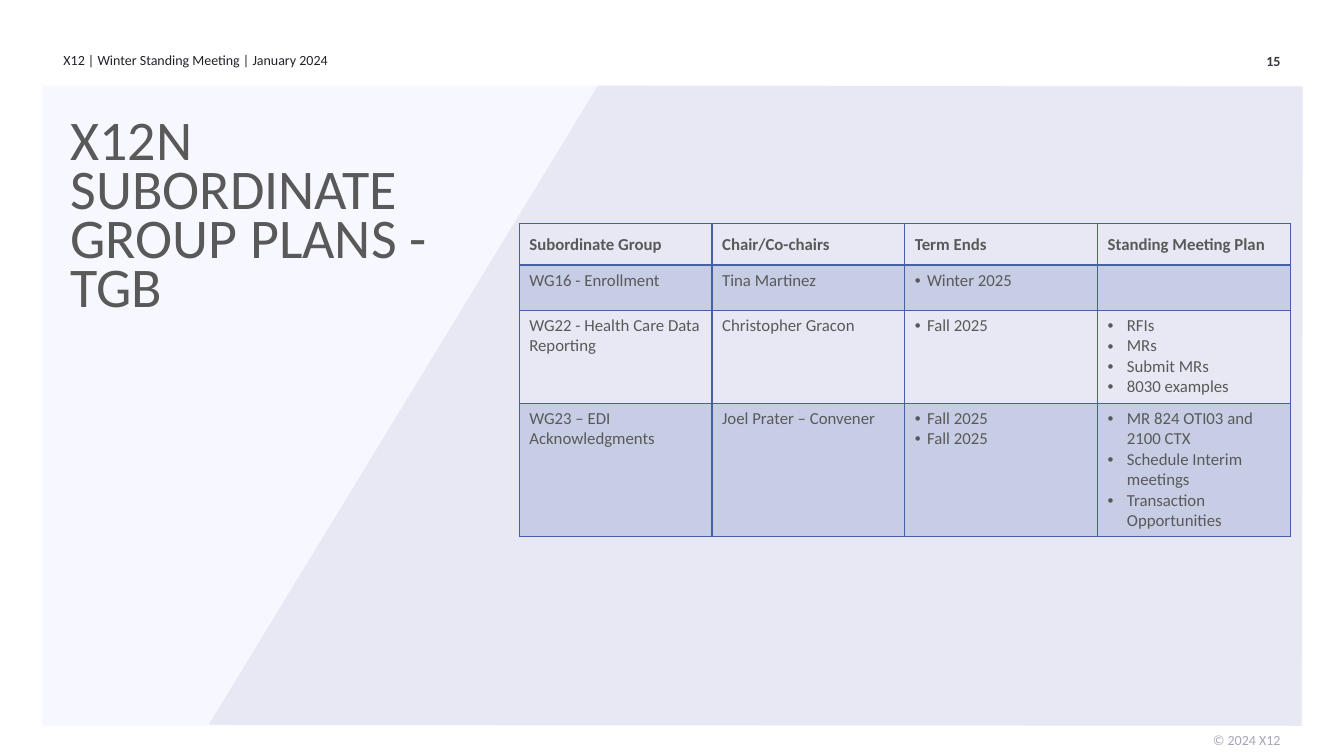
from lxml.etree import SubElement
from pptx import Presentation
from pptx.dml.color import RGBColor
from pptx.enum.shapes import MSO_SHAPE
from pptx.enum.text import MSO_ANCHOR, MSO_AUTO_SIZE, PP_ALIGN
from pptx.oxml.ns import qn
from pptx.util import Inches, Pt

GREY = "595959"
BLUE = "4361A3"
FONT = "Calibri"

HEADINGS = ["Subordinate Group", "Chair/Co-chairs", "Term Ends", "Standing Meeting Plan"]
GROUPS = [
    ("WG16 - Enrollment", "Tina Martinez", ["Winter 2025"], []),
    ("WG22 - Health Care Data Reporting", "Christopher Gracon", ["Fall 2025"],
     ["RFIs", "MRs", "Submit MRs", "8030 examples"]),
    ("WG23 – EDI Acknowledgments", "Joel Prater – Convener", ["Fall 2025", "Fall 2025"],
     ["MR 824 OTI03 and 2100 CTX", "Schedule Interim meetings", "Transaction Opportunities"]),
]
ROW_HEIGHTS = [0.41, 0.45, 0.92, 1.32]
BULLET_INDENTS = {2: 0.12, 3: 0.19}


def color(hex_string):
    return RGBColor.from_string(hex_string)


def write(frame, lines, size=12, ink=GREY, bold=False, align=PP_ALIGN.LEFT,
          spacing=None, bullet_indent=None):
    """Fill a text frame with one paragraph per line."""
    frame.word_wrap = True
    for index, line in enumerate(lines):
        paragraph = frame.paragraphs[0] if index == 0 else frame.add_paragraph()
        if bullet_indent:
            properties = paragraph._p.get_or_add_pPr()
            properties.set("marL", str(Inches(bullet_indent)))
            properties.set("indent", str(-Inches(bullet_indent)))
            SubElement(properties, qn("a:buFont"), typeface="Arial")
            SubElement(properties, qn("a:buChar"), char="•")
        paragraph.alignment = align
        if spacing:
            paragraph.line_spacing = spacing
        run = paragraph.add_run()
        run.text = line
        run.font.name = FONT
        run.font.size = Pt(size)
        run.font.bold = bold
        run.font.color.rgb = color(ink)


class SlideBuilder:
    def __init__(self, slide):
        self.slide = slide
        self.shapes = slide.shapes

    def paint(self, shape, fill):
        shape.shadow.inherit = False
        shape.fill.solid()
        shape.fill.fore_color.rgb = color(fill)
        shape.line.fill.background()

    def panel(self, left, top, width, height, fill):
        shape = self.shapes.add_shape(MSO_SHAPE.RECTANGLE, Inches(left), Inches(top),
                                      Inches(width), Inches(height))
        self.paint(shape, fill)

    def polygon(self, points, fill):
        corners = [(Inches(x), Inches(y)) for x, y in points]
        builder = self.shapes.build_freeform(*corners[0])
        builder.add_line_segments(corners[1:], close=True)
        self.paint(builder.convert_to_shape(), fill)

    def no_margins(self, frame):
        frame.margin_left = frame.margin_top = frame.margin_right = frame.margin_bottom = 0
        frame.vertical_anchor = MSO_ANCHOR.TOP
        frame.auto_size = MSO_AUTO_SIZE.NONE

    def label(self, text, left, top, width, **text_format):
        box = self.shapes.add_textbox(Inches(left), Inches(top), Inches(width), Inches(0.25))
        self.no_margins(box.text_frame)
        write(box.text_frame, [text], size=10, **text_format)

    def title(self, text, left, top, width, height):
        title = self.shapes.title
        title.left, title.top = Inches(left), Inches(top)
        title.width, title.height = Inches(width), Inches(height)
        self.no_margins(title.text_frame)
        write(title.text_frame, [text], size=40, spacing=Pt(35))
        # Bring the title in front of the background
        title._element.getparent().append(title._element)

    def border(self, cell, side, width):
        line = SubElement(cell._tc.get_or_add_tcPr(), qn(f"a:ln{side}"), w=str(Pt(width)))
        SubElement(SubElement(line, qn("a:solidFill")), qn("a:srgbClr"), val=BLUE)

    def style_cell(self, cell, row):
        for side in "LRTB":
            meets_header = (row, side) in [(0, "B"), (1, "T")]
            self.border(cell, side, 2 if meets_header else 1)
        if row % 2:
            cell.fill.solid()
            cell.fill.fore_color.rgb = color(BLUE)
            tint = cell._tc.tcPr.find(qn("a:solidFill")).find(qn("a:srgbClr"))
            SubElement(tint, qn("a:alpha"), val="20000")
        else:
            cell.fill.background()

    def table(self, left, top, width):
        rows = [HEADINGS, *GROUPS]
        frame = self.shapes.add_table(len(rows), len(HEADINGS), Inches(left), Inches(top),
                                      Inches(width), Inches(sum(ROW_HEIGHTS)))
        table = frame.table
        table.first_row = table.horz_banding = False
        for row, values in enumerate(rows):
            table.rows[row].height = Inches(ROW_HEIGHTS[row])
            for column, value in enumerate(values):
                cell = table.cell(row, column)
                self.style_cell(cell, row)
                if row == 0:
                    cell.vertical_anchor = MSO_ANCHOR.MIDDLE
                    write(cell.text_frame, [value], bold=True)
                elif column in BULLET_INDENTS:
                    write(cell.text_frame, value, bullet_indent=BULLET_INDENTS[column])
                else:
                    write(cell.text_frame, [value])


def main():
    presentation = Presentation()
    presentation.slide_width = Inches(13.33)
    presentation.slide_height = Inches(7.5)
    builder = SlideBuilder(presentation.slides.add_slide(presentation.slide_layouts[5]))

    # Background
    builder.panel(0.42, 0.85, 12.5, 6.35, "F7F7FF")
    builder.polygon([(2.07, 7.19), (5.93, 0.85), (12.92, 0.86), (12.91, 7.2)], "E8E8F5")

    # Header and footer
    builder.label("X12 | Winter Standing Meeting | January 2024", 0.63, 0.51, 4.5, ink="21212B")
    builder.label("15", 11.19, 0.52, 1.51, ink="363640", bold=True, align=PP_ALIGN.RIGHT)
    builder.label("© 2024 X12", 11.19, 7.26, 1.51, ink="A6A6BA", align=PP_ALIGN.RIGHT)

    # Title and group plans
    builder.title("X12N SUBORDINATE GROUP PLANS - TGB", 0.7, 1.22, 3.69, 1.9)
    builder.table(5.15, 2.22, 7.65)

    presentation.save("out.pptx")


if __name__ == "__main__":
    main()
